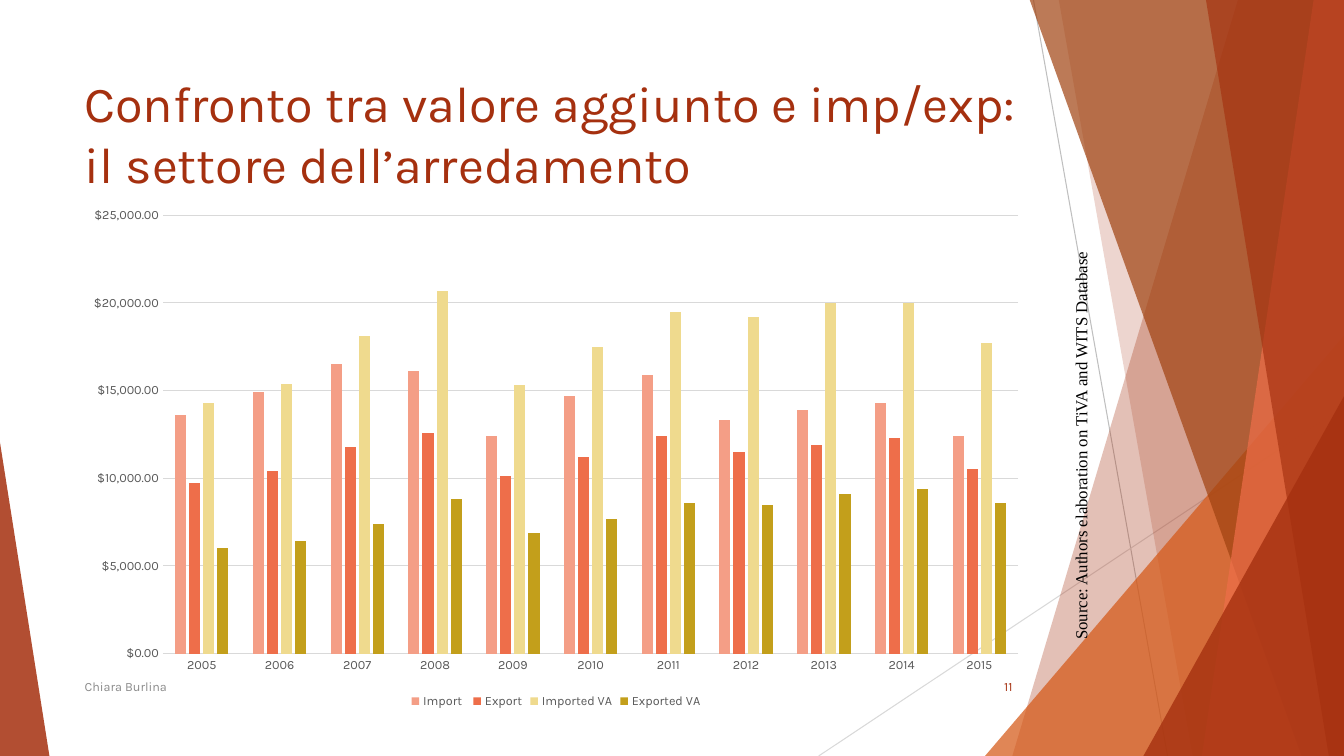
from lxml import etree
from pptx import Presentation
from pptx import util as u
from pptx.chart.data import CategoryChartData
from pptx.dml.color import RGBColor
from pptx.enum import chart as ch, shapes, text
from pptx.oxml.ns import qn

# Content
TITLE = "Confronto tra valore aggiunto e imp/exp:\vil settore dell’arredamento"
SOURCE = "Source: Authors elaboration on TiVA and WITS Database"
AUTHOR = "Chiara Burlina"
NUMBER = "11"
YEARS = [str(year) for year in range(2005, 2016)]

RUST = RGBColor(0xA5, 0x30, 0x0F)
ORANGE = RGBColor(0xD5, 0x58, 0x16)
BROWN = RGBColor(0xA0, 0x42, 0x10)
CORAL = RGBColor(0xEE, 0x6E, 0x4A)
SALMON = RGBColor(0xF4, 0x9E, 0x86)
SAND = RGBColor(0xEF, 0xDA, 0x8E)
GOLD = RGBColor(0xC3, 0x9F, 0x1B)
BLACK = RGBColor(0, 0, 0)
DARK = RGBColor(0x59, 0x59, 0x59)
GREY = RGBColor(0x8C, 0x8C, 0x8C)
SILVER = RGBColor(0xBF, 0xBF, 0xBF)
PALE = RGBColor(0xD9, 0xD9, 0xD9)

SERIES = [
    ("Import ", SALMON, (13600, 14900, 16500, 16100, 12400, 14700,
                         15900, 13300, 13900, 14300, 12400)),
    ("Export", CORAL, (9700, 10400, 11800, 12600, 10100, 11200,
                       12400, 11500, 11900, 12300, 10500)),
    ("Imported VA", SAND, (14300, 15400, 18100, 20700, 15300, 17500,
                           19500, 19200, 20000, 20000, 17700)),
    ("Exported VA", GOLD, (6000, 6400, 7400, 8800, 6900, 7700,
                           8600, 8500, 9100, 9400, 8600)),
]

# Decoration
WIDE, HIGH, TOP = 13.33, 7.5, -0.01
LINES = [((10.25, 0), (11.58, HIGH), SILVER),
         ((WIDE, 4.03), (8.12, HIGH), PALE)]
# Bands reach the right edge: top left x, bottom left x, colour, opacity
# Wedges stand on the bottom edge: left, top, width, apex, colour, opacity
BANDS_BACK = [(12.28, 10.04, RUST, 30), (10.5, 11.83, RUST, 20)]
WEDGE_BACK = [(9.77, 3.33, 3.56, 1, ORANGE, 72)]
BANDS_FRONT = [(10.21, 12.91, BROWN, 70), (13.03, 11.92, CORAL, 70),
               (11.96, 13.18, RUST, 65)]
WEDGES_FRONT = [(11.34, 3.93, 1.99, 1, RUST, 80), (0, 4.39, 0.49, 0, RUST, 85)]

deck = Presentation()
deck.slide_width, deck.slide_height = u.Inches(WIDE), u.Inches(HIGH)
slide = deck.slides.add_slide(deck.slide_layouts[6])
parts = slide.shapes


def paint(shape, color, alpha):
    shape.shadow.inherit = False
    shape.fill.solid()
    shape.fill.fore_color.rgb = color
    tone = shape.fill._xPr.find(".//" + qn("a:srgbClr"))
    etree.SubElement(tone, qn("a:alpha")).set("val", str(alpha * 1000))
    shape.line.fill.background()


def add_bands(bands):
    for top, base, color, alpha in bands:
        pen = parts.build_freeform(u.Inches(top), u.Inches(TOP))
        pen.add_line_segments([(u.Inches(x), u.Inches(y)) for x, y in
                               ((WIDE, TOP), (WIDE, HIGH), (base, HIGH))])
        paint(pen.convert_to_shape(), color, alpha)


def add_wedges(wedges):
    for left, top, width, apex, color, alpha in wedges:
        wedge = parts.add_shape(
            shapes.MSO_SHAPE.ISOSCELES_TRIANGLE, u.Inches(left),
            u.Inches(top), u.Inches(width), u.Inches(HIGH - top))
        wedge.adjustments[0] = apex
        paint(wedge, color, alpha)


def style(font, size, color, name="Karla"):
    font.size, font.name = u.Pt(size), name
    font.color.rgb = color


def add_text(words, place, size, color, name="Karla", turn=0,
             align=text.PP_ALIGN.LEFT, anchor=text.MSO_ANCHOR.TOP):
    box = parts.add_textbox(*map(u.Inches, place))
    box.rotation = turn
    frame = box.text_frame
    frame.word_wrap = True
    frame.vertical_anchor = anchor
    para = frame.paragraphs[0]
    para.text = words
    para.alignment = align
    for run in para.runs:
        style(run.font, size, color, name)


def rule(line, color):
    line.color.rgb = color
    line.width = u.Pt(0.75)


# Background lines and facets
for start, end, color in LINES:
    line = parts.add_connector(shapes.MSO_CONNECTOR.STRAIGHT,
                               *map(u.Inches, start + end))
    rule(line.line, color)
    etree.SubElement(line._element.spPr, qn("a:effectLst"))
add_bands(BANDS_BACK)
add_wedges(WEDGE_BACK)
add_bands(BANDS_FRONT)
add_wedges(WEDGES_FRONT)

# Title and source
add_text(TITLE, (0.74, 0.67, 9.55, 1.44), 36, RUST)
add_text(SOURCE, (8.57, 4.4, 4.3, 0.3), 12, BLACK, name="Times New Roman",
         turn=270, align=text.PP_ALIGN.RIGHT)

# Chart
data = CategoryChartData()
data.categories = YEARS
for name, color, values in SERIES:
    data.add_series(name, values)
chart = parts.add_chart(ch.XL_CHART_TYPE.COLUMN_CLUSTERED,
                        *map(u.Inches, (0.74, 1.96, 9.55, 5.11)), data).chart
style(chart.font, 10, BLACK)
chart.has_title = False
chart.has_legend = True
chart.legend.position = ch.XL_LEGEND_POSITION.BOTTOM
chart.legend.include_in_layout = False
style(chart.legend.font, 9, DARK)

plot = chart.plots[0]
plot.vary_by_categories = False
plot.gap_width, plot.overlap = 219, -27
for bars, (name, color, values) in zip(plot.series, SERIES):
    bars.format.fill.solid()
    bars.format.fill.fore_color.rgb = color

years, amounts = chart.category_axis, chart.value_axis
for axis in (years, amounts):
    axis.major_tick_mark = axis.minor_tick_mark = ch.XL_TICK_MARK.NONE
    style(axis.tick_labels.font, 9, DARK)
rule(years.format.line, PALE)
amounts.format.line.fill.background()
amounts.minimum_scale, amounts.maximum_scale = 0, 25000
amounts.major_unit = 5000
amounts.has_major_gridlines = True
rule(amounts.major_gridlines.format.line, PALE)
amounts.tick_labels.number_format = "[$$-409]#,##0.00"
amounts.tick_labels.number_format_is_linked = False

# Footer
add_text(AUTHOR, (0.74, 6.61, 6.89, 0.4), 9, GREY,
         anchor=text.MSO_ANCHOR.MIDDLE)
add_text(NUMBER, (9.39, 6.61, 0.75, 0.4), 9, RUST,
         align=text.PP_ALIGN.RIGHT, anchor=text.MSO_ANCHOR.MIDDLE)

deck.save("out.pptx")
